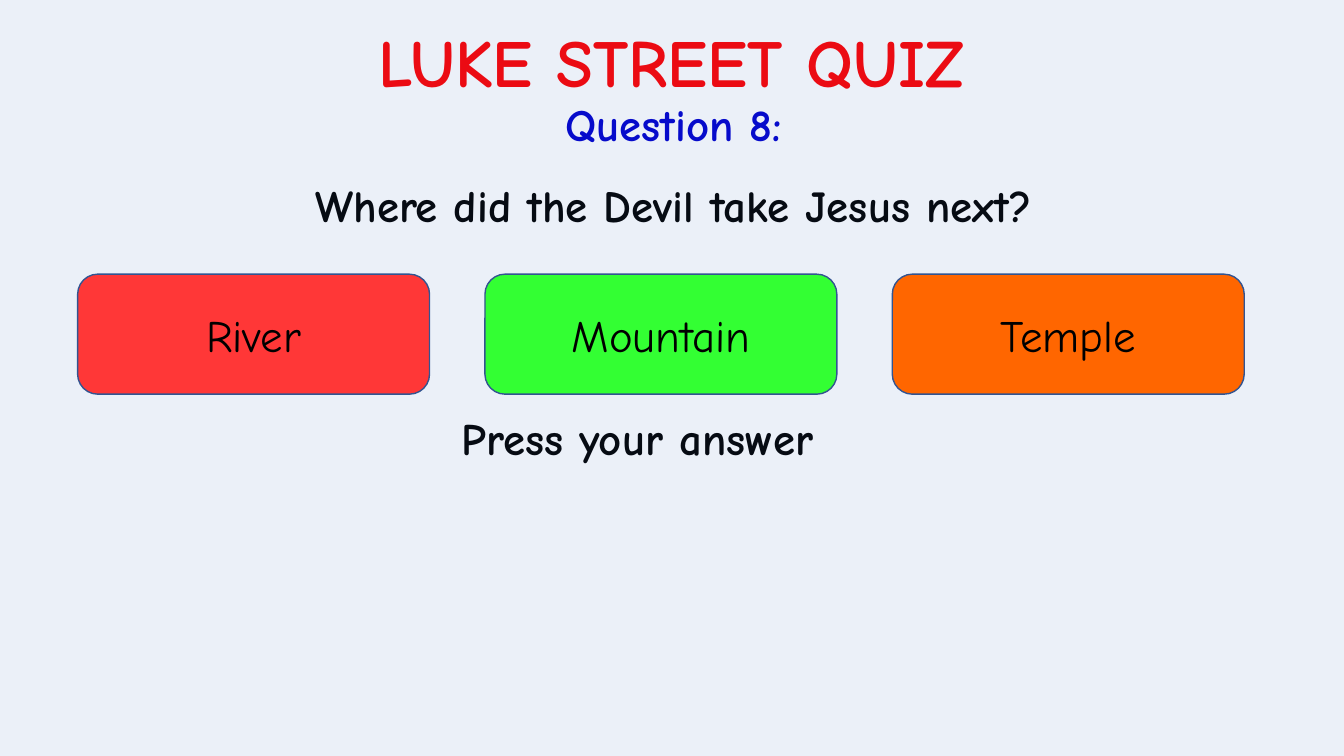
from dataclasses import dataclass

from lxml.etree import SubElement
from pptx import Presentation
from pptx.dml.color import RGBColor as RGB
from pptx.enum.shapes import MSO_SHAPE as Shape
from pptx.enum.text import MSO_ANCHOR as Anchor, MSO_AUTO_SIZE as AutoSize, PP_ALIGN as Align
from pptx.oxml.ns import qn
from pptx.util import Inches, Pt


@dataclass(frozen=True)
class Theme:
    font: str = "Comic Neue"
    title_size: int = 48
    body_size: int = 32
    title: str = "FF0000"
    number: str = "0000CC"
    ink: str = "000000"
    tint: str = "4472C4"
    border: str = "325491"
    river: str = "FF3737"
    mountain: str = "33FF33"
    temple: str = "FF6600"


class QuizSlide:
    def __init__(self, slide, theme):
        self.slide = slide
        self.theme = theme

    def set_words(self, frame, words, size, color, bold=True, align=Align.CENTER):
        line = frame.paragraphs[0]
        line.text = words
        line.alignment = align
        line.font.name = self.theme.font
        line.font.size = Pt(size)
        line.font.bold = bold
        line.font.color.rgb = RGB.from_string(color)
        return line

    def text(self, box, words, size=None, color=None, align=Align.CENTER,
             wrap=True, grow=False, spacing=None, before=0):
        frame = self.slide.shapes.add_textbox(*map(Inches, box)).text_frame
        frame.word_wrap = wrap
        frame.auto_size = AutoSize.SHAPE_TO_FIT_TEXT if grow else AutoSize.NONE
        line = self.set_words(frame, words, size or self.theme.body_size,
                              color or self.theme.ink, align=align)
        line.space_before = Pt(before)
        if spacing:
            line.line_spacing = spacing

    def panel(self, kind, box, fill):
        panel = self.slide.shapes.add_shape(kind, *map(Inches, box))
        panel.shadow.inherit = False
        panel.fill.solid()
        panel.fill.fore_color.rgb = RGB.from_string(fill)
        panel.line.color.rgb = RGB.from_string(self.theme.border)
        panel.line.width = Pt(1)
        return panel

    def veil(self, box, fill, opacity):
        veil = self.panel(Shape.RECTANGLE, box, fill)
        color = next(veil.element.iter(qn("a:srgbClr")))
        SubElement(color, qn("a:alpha"), val=str(opacity * 1000))

    def answer(self, box, words, fill):
        frame = self.panel(Shape.ROUNDED_RECTANGLE, box, fill).text_frame
        frame.word_wrap = True
        frame.vertical_anchor = Anchor.MIDDLE
        self.set_words(frame, words, self.theme.body_size, self.theme.ink, bold=False)


def main():
    deck = Presentation()
    deck.slide_width, deck.slide_height = Inches(13.33), Inches(7.5)
    theme = Theme()
    quiz = QuizSlide(deck.slides.add_slide(deck.slide_layouts[6]), theme)

    # Heading, question and prompt
    quiz.text((3.12, 0.15, 7.08, 0.91), "LUKE STREET QUIZ",
              size=theme.title_size, color=theme.title, wrap=False, grow=True)
    quiz.text((0.9, 1.73, 11.57, 1.19), "Where did the Devil take Jesus next?",
              spacing=Pt(37), before=10)
    quiz.text((4.48, 4.09, 6.73, 0.72), "Press your answer",
              align=Align.LEFT, spacing=0.9, before=7.5)
    quiz.text((4.48, 0.91, 4.41, 0.64), "Question 8:", color=theme.number, grow=True)

    # Pale tint over the whole slide
    quiz.veil((-0.68, -0.61, 14.19, 8.73), theme.tint, opacity=10)

    # Answer buttons
    answers = (("River", theme.river), ("Mountain", theme.mountain), ("Temple", theme.temple))
    left, pitch = 0.77, 4.04
    for column, (words, fill) in enumerate(answers):
        quiz.answer((left + column * pitch, 2.72, 3.49, 1.19), words, fill)

    deck.save("out.pptx")


if __name__ == "__main__":
    main()
